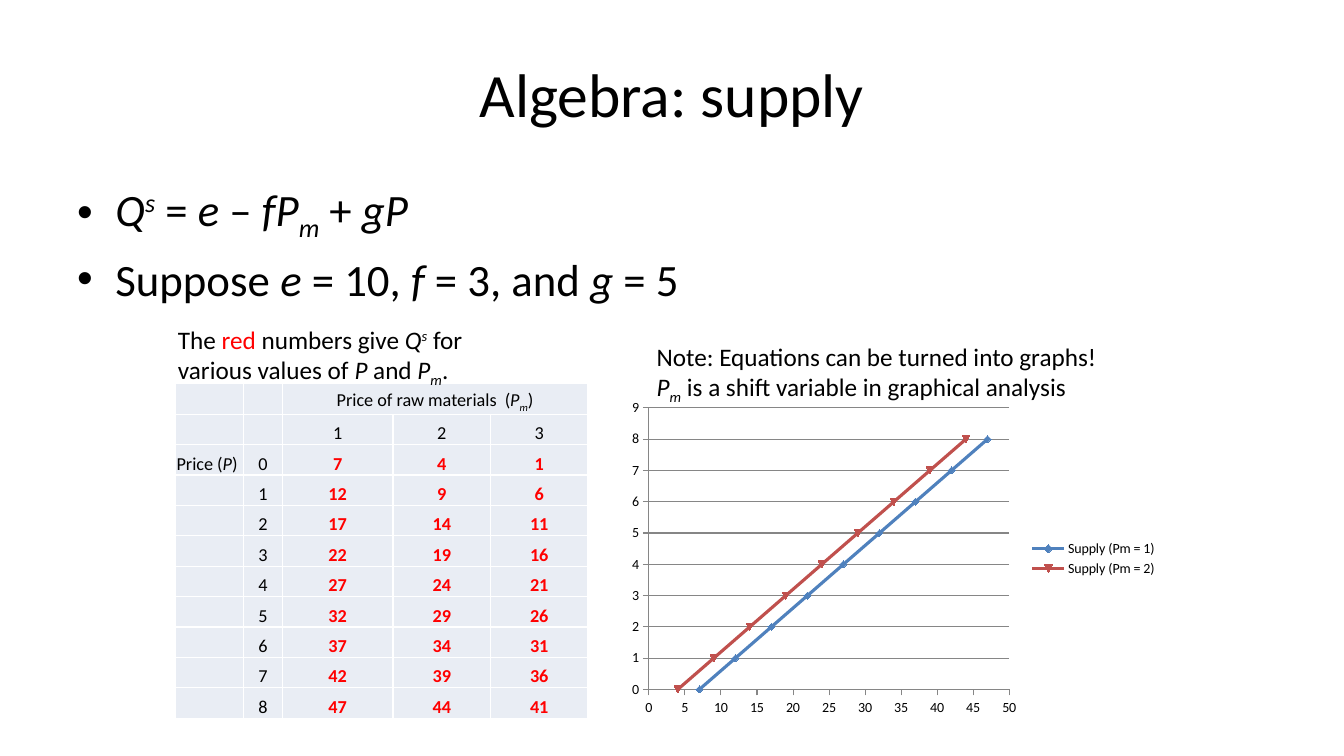
from lxml.etree import SubElement as Sub
from pptx import Presentation
from pptx.chart.data import XyChartData
from pptx.dml.color import RGBColor as Rgb
from pptx.enum.chart import XL_CHART_TYPE as Kind, XL_LEGEND_POSITION as Spot, XL_TICK_MARK as Tick
from pptx.enum.text import MSO_ANCHOR as Anchor, PP_ALIGN as Align
from pptx.oxml.ns import qn
from pptx.util import Inches, Pt

COLS, ROWS = 80, 45
UNIT = Inches(1 / 6)
INK = {"text": "000000", "red": "FF0000", "cell": "E9EDF4", "edge": "FFFFFF",
       "grid": "868686", "one": "4F81BD", "two": "C0504D"}
FONT = "Calibri"
MARKS = {"_": "italic", "*": "bold", "#": "red", "^": "sup", "~": "sub"}
PRICES = range(9)
COSTS = (1, 2, 3)


def supply(cost, price):
    return 10 - 3 * cost + 5 * price


def units(*spans):
    return [round(span * UNIT) for span in spans]


def rgb(name):
    return Rgb.from_string(INK[name])


def assign(obj, **vals):
    for key, val in vals.items():
        setattr(obj, key, val)


def pieces(text):
    """Yield (words, active styles); each mark in MARKS switches its style on or off."""
    words, live = "", frozenset()
    for char in text:
        if char in MARKS:
            if words:
                yield words, live
            words, live = "", live ^ {MARKS[char]}
        else:
            words += char
    if words:
        yield words, live


class Deck:
    def __init__(self):
        self.prs = Presentation()
        assign(self.prs, slide_width=COLS * UNIT, slide_height=ROWS * UNIT)
        self.slide = self.prs.slides.add_slide(self.prs.slide_layouts[6])
        self.shapes = self.slide.shapes

    def line(self, para, text, size, align=Align.LEFT):
        para.alignment = align
        for words, live in pieces(text):
            run = para.add_run()
            run.text = words
            assign(run.font, name=FONT, size=Pt(size),
                   italic="italic" in live, bold="bold" in live)
            run.font.color.rgb = rgb("red" if "red" in live else "text")
            if live & {"sup", "sub"}:
                run.font._element.set("baseline", "30000" if "sup" in live else "-25000")
        if not text:
            Sub(para._p, qn("a:endParaRPr"), sz=str(size * 100))

    def text(self, box, lines, size, align=Align.LEFT, anchor=Anchor.TOP, bullet=False):
        frame = self.shapes.add_textbox(*units(*box)).text_frame
        assign(frame, word_wrap=True, vertical_anchor=anchor)
        for num, line in enumerate(lines):
            para = frame.add_paragraph() if num else frame.paragraphs[0]
            self.line(para, line, size, align)
            if bullet:
                para.space_before = Pt(size * 0.2)
                props = para._p.get_or_add_pPr()
                props.set("marL", str(Inches(0.38)))
                props.set("indent", str(-Inches(0.38)))
                Sub(props, qn("a:buFont"), typeface="Arial")
                Sub(props, qn("a:buChar"), char="•")

    def edges(self, cell):
        props = cell._tc.get_or_add_tcPr()
        for num, side in enumerate("LRTB"):
            line = props.makeelement(qn("a:ln" + side), {"w": str(Pt(1))})
            fill = Sub(line, qn("a:solidFill"))
            Sub(fill, qn("a:srgbClr"), val=INK["edge"])
            props.insert(num, line)

    def table(self, left, top, widths, height, grid, size):
        box = units(left, top, sum(widths), height * len(grid))
        table = self.shapes.add_table(len(grid), len(widths), *box).table
        assign(table, first_row=False, horz_banding=False)
        for col, width in zip(table.columns, units(*widths)):
            col.width = width
        for row, line in zip(table.rows, grid):
            row.height = units(height)[0]
            for num, (cell, text) in enumerate(zip(row.cells, line)):
                inset = Inches(0.01)
                assign(cell, vertical_anchor=Anchor.BOTTOM, margin_left=inset,
                       margin_right=inset, margin_top=inset, margin_bottom=0)
                cell.fill.solid()
                cell.fill.fore_color.rgb = rgb("cell")
                self.edges(cell)
                self.line(cell.text_frame.paragraphs[0], text, size,
                          Align.CENTER if num else Align.LEFT)
        return table

    def chart(self, box, plot, curves, size):
        """Draw scatter lines from {name: (colour, points)}; plot is a share of the box."""
        data = XyChartData()
        for name, (_, points) in curves.items():
            series = data.add_series(name)
            for point in points:
                series.add_data_point(*point)
        chart = self.shapes.add_chart(Kind.XY_SCATTER_LINES, *units(*box), data).chart
        assign(chart, has_title=False, has_legend=True)
        assign(chart.legend, position=Spot.RIGHT, include_in_layout=False)
        assign(chart.font, name=FONT, size=Pt(size))
        chart.font.color.rgb = rgb("text")
        chart.plots[0].vary_by_categories = False
        for axis, top, step in ((chart.category_axis, 50, 5), (chart.value_axis, 9, 1)):
            assign(axis, minimum_scale=0, maximum_scale=top, major_unit=step,
                   major_tick_mark=Tick.OUTSIDE, minor_tick_mark=Tick.NONE,
                   has_major_gridlines=step == 1)
            axis.format.line.color.rgb = rgb("grid")
        chart.value_axis.major_gridlines.format.line.color.rgb = rgb("grid")
        for series, (color, _) in zip(chart.plots[0].series, curves.values()):
            series.smooth = False
            series.format.line.width = Pt(2.25)
            series.format.line.color.rgb = rgb(color)
            fill = series.marker.format.fill
            fill.solid()
            fill.fore_color.rgb = rgb(color)
            series.marker.format.line.color.rgb = rgb(color)
        area = chart._chartSpace.chart.plotArea
        for old in area.findall(qn("c:layout")):
            area.remove(old)
        layout = area.makeelement(qn("c:layout"), {})
        area.insert(0, layout)
        manual = Sub(layout, qn("c:manualLayout"))
        modes = {"layoutTarget": "inner", "xMode": "edge", "yMode": "edge"}
        for tag, val in {**modes, **dict(zip("xywh", plot))}.items():
            Sub(manual, qn("c:" + tag), val=str(val))


def main():
    deck = Deck()
    deck.text((4, 1.8, 72, 7.5), ["Algebra: supply"], 44, Align.CENTER, Anchor.MIDDLE)
    deck.text((4, 10.5, 72, 29.7),
              ["_Q^s^_ = _e_ – _fP~m~_ + _gP_", "Suppose _e_ = 10, _f_ = 3, and _g_ = 5"],
              32, bullet=True)
    grid = [["", "", "Price of raw materials  (_P~m~_)", "", ""],
            ["", "", *map(str, COSTS)]]
    for price in PRICES:
        grid.append(["" if price else "Price (_P_)", str(price),
                     *(f"#*{supply(cost, price)}*#" for cost in COSTS)])
    table = deck.table(10.45, 22.85, (4.05, 2.3, 6.6, 5.8, 5.8), 1.81, grid, 13)
    table.cell(0, 2).merge(table.cell(0, 4))
    curves = {f"Supply (Pm = {cost})": (color, [(supply(cost, p), p) for p in PRICES])
              for cost, color in ((1, "one"), (2, "two"))}
    deck.chart((37, 23.5, 32.5, 19.5), (0.05, 0.04, 0.66, 0.86), curves, 10)
    deck.text((10, 19, 19.5, 4.25),
              ["The #red# numbers give _Q^s^_ for various values of _P_ and _P~m~_."], 18)
    deck.text((38.5, 20, 28, 4.25),
              ["Note: Equations can be turned into graphs! "
               "_P~m~_ is a shift variable in graphical analysis"], 18)
    deck.prs.save("out.pptx")


if __name__ == "__main__":
    main()
